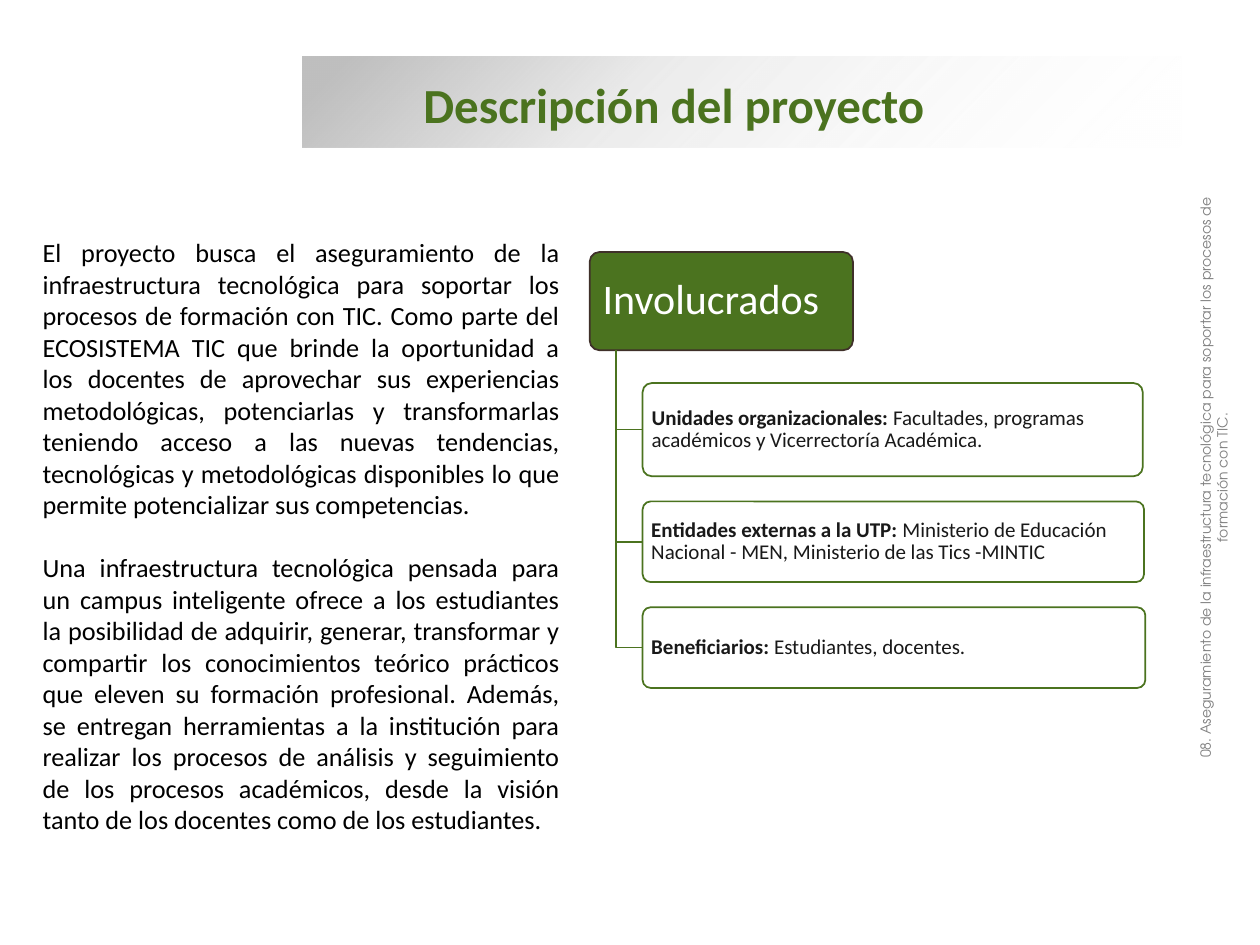
from lxml.etree import SubElement
from pptx import Presentation
from pptx.dml.color import RGBColor
from pptx.enum.shapes import MSO_SHAPE as Shape
from pptx.enum.text import MSO_ANCHOR as Anchor, MSO_AUTO_SIZE as AutoSize, PP_ALIGN as Align
from pptx.oxml import parse_xml
from pptx.oxml.ns import nsdecls, qn
from pptx.util import Inches, Pt

GREEN = RGBColor(0x4B, 0x73, 0x1F)
BROWN = RGBColor(0x3F, 0x30, 0x29)
WHITE = RGBColor(0xFF, 0xFF, 0xFF)
BLACK = RGBColor(0x00, 0x00, 0x00)
INK = RGBColor(0x19, 0x19, 0x19)
GRAY = RGBColor(0x80, 0x80, 0x80)
SILVER = RGBColor(0xBF, 0xBF, 0xBF)

deck = Presentation()
deck.slide_width, deck.slide_height = Inches(10), Inches(7.5)
page = deck.slides.add_slide(deck.slide_layouts[5])
CELL = deck.slide_width / 100


def cells(*counts):
    return [round(count * CELL) for count in counts]


def write(box, paragraphs, font, align=Align.LEFT, anchor=Anchor.TOP, margins=(1, 0.5), spacing=1, gap=0):
    frame = box.text_frame
    across, down = cells(*margins)
    layout = {"word_wrap": True, "auto_size": AutoSize.NONE, "vertical_anchor": anchor,
              "margin_left": across, "margin_right": across,
              "margin_top": down, "margin_bottom": down}
    for name, value in layout.items():
        setattr(frame, name, value)
    for index, spans in enumerate(paragraphs):
        para = frame.add_paragraph() if index else frame.paragraphs[0]
        para.alignment, para.line_spacing = align, spacing
        para.space_before = Pt(gap if index else 0)
        for text, bold in spans:
            span = para.add_run()
            span.text = text
            span.font.color.rgb = font["color"]
            for name in ("name", "size"):
                setattr(span.font, name, font[name])
            span.font.bold = bold


description = [
    "El proyecto busca el aseguramiento de la infraestructura tecnológica para soportar los procesos de "
    "formación con TIC. Como parte del ECOSISTEMA TIC que brinde la oportunidad a los docentes de aprovechar "
    "sus experiencias metodológicas, potenciarlas y transformarlas teniendo acceso a las nuevas tendencias, "
    "tecnológicas y metodológicas disponibles lo que permite potencializar sus competencias.",
    "Una infraestructura tecnológica pensada para un campus inteligente ofrece a los estudiantes la "
    "posibilidad de adquirir, generar, transformar y compartir los conocimientos teórico prácticos que eleven "
    "su formación profesional. Además, se entregan herramientas a la institución para realizar los procesos "
    "de análisis y seguimiento de los procesos académicos, desde la visión tanto de los docentes como de los "
    "estudiantes.",
]
body = page.shapes.add_textbox(*cells(2.4, 18.3, 43, 49))
write(body, [[(text, False)] for text in description],
      {"name": "Calibri", "size": Pt(15), "color": BLACK}, align=Align.JUSTIFY, gap=18)

header = page.shapes.add_shape(Shape.ROUNDED_RECTANGLE, *cells(46.8, 20, 20.9, 7.8))
header.shadow.inherit = False
header.adjustments[0] = 0.1
header.fill.solid()
header.fill.fore_color.rgb = GREEN
header.line.color.rgb = BROWN
header.line.width = Pt(1)
write(header, [[("Involucrados", False)]], {"name": "Calibri", "size": Pt(24), "color": WHITE},
      anchor=Anchor.MIDDLE, margins=(0.8, 0.5), spacing=0.9)

TRUNK, CARD_LEFT, HEADER_BOTTOM = 48.9, 51, 27.8
stakeholders = [
    (30.4, 39.7, 7.4, Align.LEFT, "Unidades organizacionales: ",
     "Facultades, programas académicos y Vicerrectoría Académica."),
    (39.8, 39.8, 6.4, Align.LEFT, "Entidades externas a la UTP: ",
     "Ministerio de Educación Nacional - MEN, Ministerio de las Tics -MINTIC"),
    (48.2, 39.9, 6.4, Align.JUSTIFY, "Beneficiarios: ", "Estudiantes, docentes."),
]
for top, width, height, align, label, detail in stakeholders:
    middle = top + height / 2
    builder = page.shapes.build_freeform(*cells(TRUNK, HEADER_BOTTOM))
    builder.add_line_segments([cells(TRUNK, middle), cells(CARD_LEFT, middle)], close=False)
    branch = builder.convert_to_shape()
    branch.fill.background()
    card = page.shapes.add_shape(Shape.ROUNDED_RECTANGLE, *cells(CARD_LEFT, top, width, height))
    card.adjustments[0] = 0.1
    card.fill.solid()
    card.fill.fore_color.rgb = WHITE
    tint = card.element.spPr.find(qn("a:solidFill")).find(qn("a:srgbClr"))
    SubElement(tint, qn("a:alpha"), val="90000")
    for outline in (branch, card):
        outline.shadow.inherit = False
        outline.line.color.rgb = GREEN
        outline.line.width = Pt(1)
    write(card, [[(label, True), (detail, False)]], {"name": "Calibri", "size": Pt(12), "color": INK},
          align=align, anchor=Anchor.MIDDLE, margins=(0.5, 0.4), spacing=0.9)

band = page.shapes.add_shape(Shape.RECTANGLE, *cells(24, 4.5, 69.8, 7.2))
band.shadow.inherit = False
band.line.fill.background()
stops = "".join(
    f'<a:gs pos="{position}000"><a:srgbClr val="{color}"><a:alpha val="{alpha}000"/></a:srgbClr></a:gs>'
    for position, color, alpha in [(5, SILVER, 100), (37, SILVER, 31), (100, WHITE, 0)])
gradient = parse_xml(f'<a:gradFill {nsdecls("a")} rotWithShape="1"><a:gsLst>{stops}</a:gsLst>'
                     '<a:lin ang="2700000" scaled="0"/></a:gradFill>')
band.element.spPr.find(qn("a:prstGeom")).addnext(gradient)

title = page.shapes.title
title.left, title.top, title.width, title.height = cells(32.6, 5.4, 62, 5.7)
write(title, [[("Descripción del proyecto", True)]], {"name": "Calibri", "size": Pt(28), "color": GREEN},
      anchor=Anchor.MIDDLE)
band.element.addnext(title.element)

side = page.shapes.add_textbox(*cells(72.8, 35.4, 48.4, 5))
side.rotation = 270
write(side, [[("08. Aseguramiento de la infraestructura tecnológica para soportar los procesos de "
               "formación con TIC.", False)]],
      {"name": "TeX Gyre Adventor", "size": Pt(8), "color": GRAY}, align=Align.CENTER)

deck.save("out.pptx")
